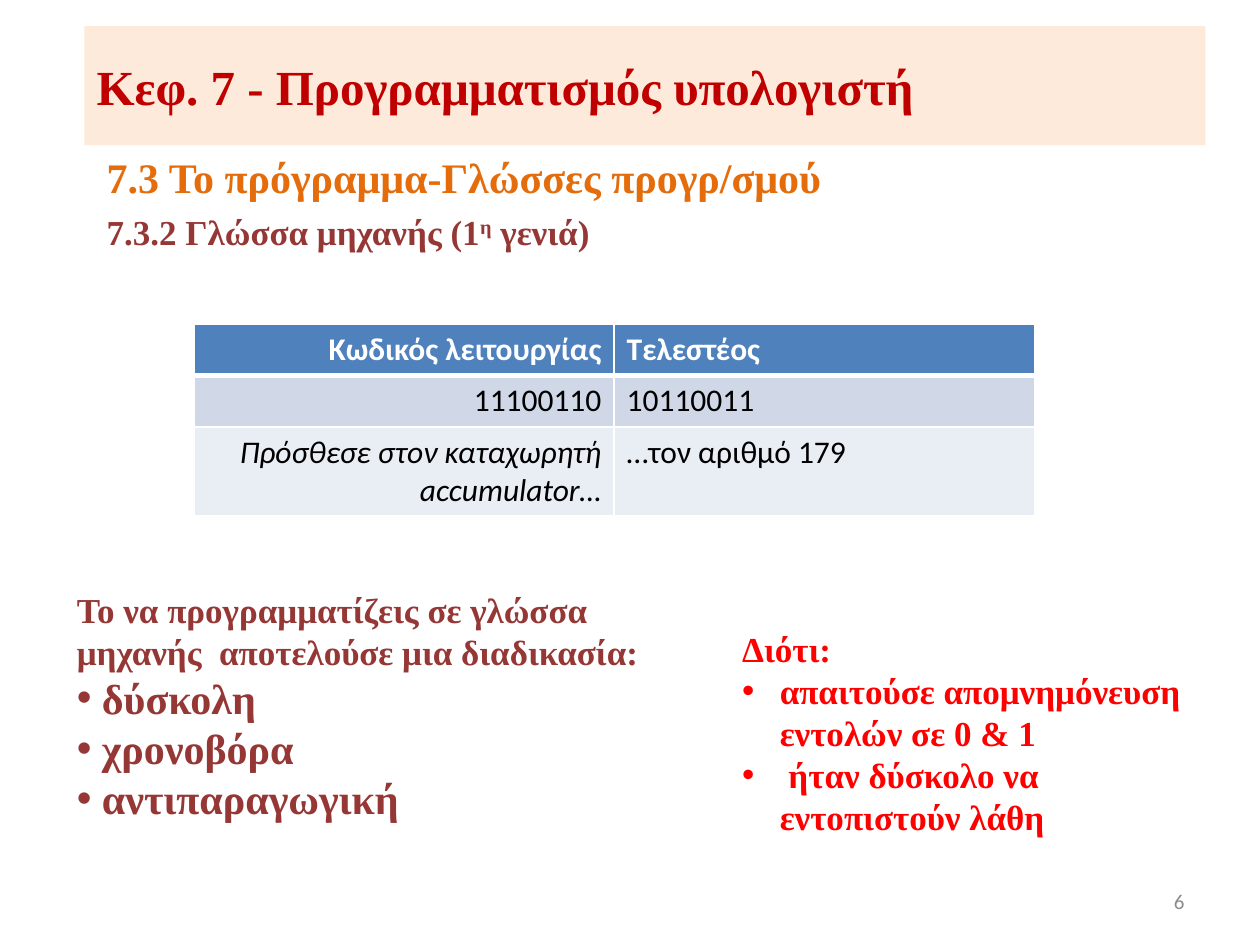
"""Build a slide on machine language with a title band, a table and two bullet lists."""
from lxml.etree import SubElement
from pptx import Presentation
from pptx.dml.color import RGBColor
from pptx.enum.shapes import MSO_SHAPE
from pptx.enum.text import MSO_ANCHOR, PP_ALIGN
from pptx.oxml.ns import qn
from pptx.util import Cm, Pt

COLORS = {
    "title": "C00000", "band": "FDEADA", "section": "E46C0A", "topic": "953735",
    "reason": "FF0000", "number": "8C8C8C", "white": "FFFFFF", "black": "000000",
    "header": "4F81BD", "odd": "D0D8E8", "even": "E9EDF4",
}
SERIF, SANS = "Times New Roman", "Calibri"
TITLE = "Κεφ. 7 - Προγραμματισμός υπολογιστή"
SECTION = "7.3 Το πρόγραμμα-Γλώσσες προγρ/σμού"
TOPIC = ("7.3.2 Γλώσσα μηχανής (1", "η", " γενιά)")
PROCESS = "Το να προγραμματίζεις σε γλώσσα μηχανής  αποτελούσε μια διαδικασία:"
QUALITIES = [" δύσκολη", " χρονοβόρα", " αντιπαραγωγική"]
REASON = "Διότι:"
REASONS = ["απαιτούσε απομνημόνευση εντολών σε 0 & 1", " ήταν δύσκολο να εντοπιστούν λάθη"]
TABLE = [
    ("Κωδικός λειτουργίας", "Τελεστέος"),
    ("11100110", "10110011"),
    ("Πρόσθεσε στον καταχωρητή accumulator…", "…τον αριθμό 179"),
]
ROW_FILLS = ["header", "odd", "even"]
ROW_HEIGHTS = [1.04, 1.04, 1.76]
COLUMN_WIDTH = 8.47


def write(frame, text, size=20, color="topic", font=SERIF, bold=True, italic=False,
          align=PP_ALIGN.LEFT, bullet=False, indent=0, raised=()):
    """Add a paragraph of one or more spans; indices in raised are superscript."""
    paragraph = frame.paragraphs[0]
    if paragraph.runs:
        paragraph = frame.add_paragraph()
    paragraph.alignment = align
    if bullet:
        properties = paragraph._p.get_or_add_pPr()
        properties.set("marL", str(Cm(indent)))
        properties.set("indent", str(-Cm(indent)))
        SubElement(properties, qn("a:buFont"), typeface="Arial")
        SubElement(properties, qn("a:buChar"), char="•")
    for index, part in enumerate((text,) if isinstance(text, str) else text):
        span = paragraph.add_run()
        span.text = part
        span.font.name, span.font.size = font, Pt(size)
        span.font.bold, span.font.italic = bold, italic
        span.font.color.rgb = RGBColor.from_string(COLORS[color])
        if index in raised:
            span._r.get_or_add_rPr().set("baseline", "30000")


def add_text(page, left, top, width, height, anchor=MSO_ANCHOR.TOP):
    """Add a wrapping text box and return its text frame."""
    frame = page.shapes.add_textbox(Cm(left), Cm(top), Cm(width), Cm(height)).text_frame
    frame.word_wrap = True
    frame.vertical_anchor = anchor
    return frame


def add_borders(cell, bottom):
    """Draw white cell borders with the given bottom width."""
    properties = cell._tc.get_or_add_tcPr()
    for index, (side, width) in enumerate([("L", 1), ("R", 1), ("T", 1), ("B", bottom)]):
        line = properties.makeelement(qn(f"a:ln{side}"), {"w": str(Pt(width))})
        properties.insert(index, line)
        SubElement(SubElement(line, qn("a:solidFill")), qn("a:srgbClr"), val=COLORS["white"])


def add_code_table(page):
    """Add the instruction table, with its first column aligned right."""
    table = page.shapes.add_table(len(TABLE), 2, Cm(3.91), Cm(6.53),
                                  Cm(2 * COLUMN_WIDTH), Cm(sum(ROW_HEIGHTS))).table
    for column in table.columns:
        column.width = Cm(COLUMN_WIDTH)
    for row, texts in enumerate(TABLE):
        table.rows[row].height = Cm(ROW_HEIGHTS[row])
        head = row == 0
        for column, text in enumerate(texts):
            cell = table.cell(row, column)
            cell.fill.solid()
            cell.fill.fore_color.rgb = RGBColor.from_string(COLORS[ROW_FILLS[row]])
            add_borders(cell, 3 if head or False else 1)
            write(cell.text_frame, text, size=18, font=SANS, bold=head,
                  color="white" if head else "black", italic=(row, column) == (2, 0),
                  align=PP_ALIGN.LEFT if column else PP_ALIGN.RIGHT)


def main():
    """Compose the slide and save the deck."""
    deck = Presentation()
    deck.slide_width, deck.slide_height = Cm(25.4), Cm(19.05)
    page = deck.slides.add_slide(deck.slide_layouts[6])

    band = page.shapes.add_shape(MSO_SHAPE.RECTANGLE, Cm(1.7), Cm(0.53), Cm(22.6), Cm(2.4))
    band.shadow.inherit = False
    band.fill.solid()
    band.fill.fore_color.rgb = RGBColor.from_string(COLORS["band"])
    band.line.fill.background()
    band.text_frame.vertical_anchor = MSO_ANCHOR.MIDDLE
    write(band.text_frame, TITLE, size=28, color="title")

    write(add_text(page, 1.9, 2.92, 17.78, 1.4), SECTION, size=24, color="section")
    write(add_text(page, 1.9, 4.11, 17.78, 1.4), TOPIC, raised=(1,))
    write(add_text(page, 18.21, 17.65, 5.92, 1.02, MSO_ANCHOR.MIDDLE), "6", size=12,
          color="number", font=SANS, bold=False, align=PP_ALIGN.RIGHT)

    process = add_text(page, 1.3, 11.73, 12.8, 5.05)
    write(process, PROCESS)
    for quality in QUALITIES:
        write(process, quality, size=24, bullet=True)

    add_code_table(page)

    reasons = add_text(page, 14.71, 12.52, 9.4, 4.52)
    write(reasons, REASON, color="reason")
    for reason in REASONS:
        write(reasons, reason, color="reason", bullet=True, indent=0.76)

    deck.save("out.pptx")


if __name__ == "__main__":
    main()
